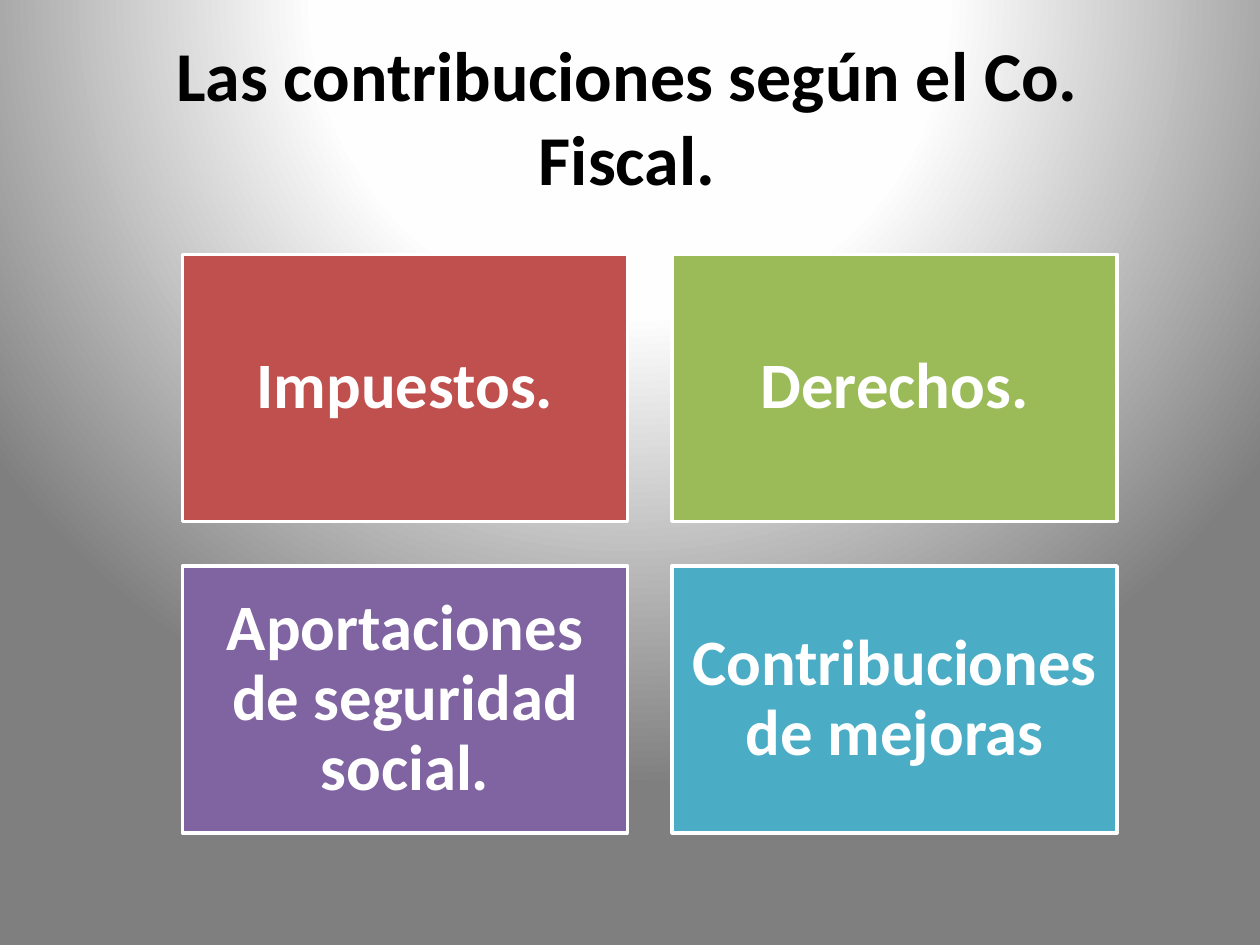
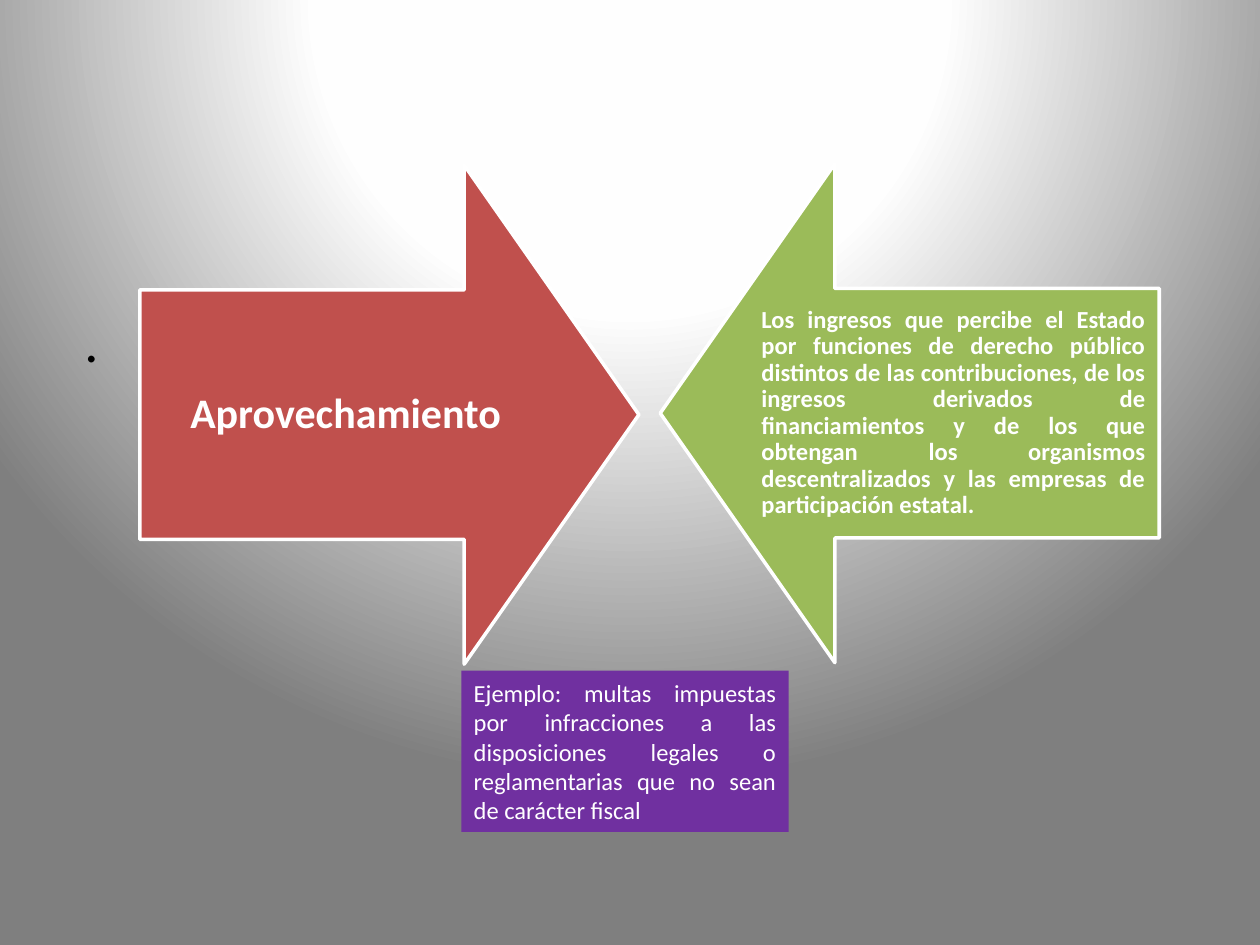
from dataclasses import dataclass

import pptx
import pptx.dml.color
import pptx.enum.shapes
import pptx.enum.text
import pptx.oxml
import pptx.oxml.ns
import pptx.util

Cm = pptx.util.Cm
Pt = pptx.util.Pt
SHAPE = pptx.enum.shapes.MSO_SHAPE
ALIGN = pptx.enum.text.PP_ALIGN
ANCHOR = pptx.enum.text.MSO_ANCHOR


@dataclass(frozen=True)
class Theme:
    # Colours
    black: str = "000000"
    white: str = "FFFFFF"
    red: str = "C0504D"
    green: str = "9BBB59"
    violet: str = "8064A2"
    aqua: str = "4BACC6"
    purple: str = "7030A0"
    glow: tuple = ((0, "FFFFFF"), (40, "FEFEFE"), (100, "7F7F7F"))
    # Type
    font: str = "Calibri"
    title: float = 40
    block: float = 37
    mark: float = 32
    concept: float = 24
    detail: float = 14


def rgb(value):
    return pptx.dml.color.RGBColor.from_string(value)


def write(frame, text, *, size, color, font, bold=False, align=ALIGN.LEFT,
          anchor=ANCHOR.MIDDLE, inset=(0.25, 0.13), spacing=None):
    """Fill a text frame; inset is (horizontal, vertical) in centimetres."""
    frame.word_wrap = True
    frame.auto_size = pptx.enum.text.MSO_AUTO_SIZE.NONE
    frame.vertical_anchor = anchor
    frame.margin_left = frame.margin_right = Cm(inset[0])
    frame.margin_top = frame.margin_bottom = Cm(inset[1])
    paragraph = frame.paragraphs[0]
    paragraph.alignment = align
    paragraph.line_spacing = spacing
    run = paragraph.add_run()
    run.text = text
    run.font.name = font
    run.font.size = Pt(size)
    run.font.bold = bold
    run.font.color.rgb = rgb(color)


class Deck:
    def __init__(self, theme):
        self.theme = theme
        self.prs = pptx.Presentation()
        self.prs.slide_width, self.prs.slide_height = Cm(25.4), Cm(19.05)
        self.slide = None
        self.set_background()

    def set_background(self):
        """Put the radial glow on the master, so every slide has it."""
        master = self.prs.slide_master
        master.background.fill.solid()
        solid = master.element.find(".//" + pptx.oxml.ns.qn("p:bgPr"))[0]
        stops = "".join(
            f'<a:gs pos="{pos * 1000}"><a:srgbClr val="{color}"/></a:gs>'
            for pos, color in self.theme.glow)
        gradient = pptx.oxml.parse_xml(
            f'<a:gradFill {pptx.oxml.ns.nsdecls("a")} rotWithShape="1">'
            f'<a:gsLst>{stops}</a:gsLst><a:path path="circle">'
            '<a:fillToRect l="50000" t="-80000" r="50000" b="180000"/>'
            '</a:path></a:gradFill>')
        solid.getparent().replace(solid, gradient)

    def add_slide(self, layout):
        layouts = self.prs.slide_layouts
        self.slide = self.prs.slides.add_slide(layouts.get_by_name(layout))

    def title(self, text, left, top, width, height):
        heading = self.slide.shapes.title
        heading.left, heading.top = Cm(left), Cm(top)
        heading.width, heading.height = Cm(width), Cm(height)
        write(heading.text_frame, text, size=self.theme.title, bold=True,
              color=self.theme.black, font=self.theme.font, align=ALIGN.CENTER)

    def label(self, text, left, top, width, height, **style):
        box = self.slide.shapes.add_textbox(
            Cm(left), Cm(top), Cm(width), Cm(height))
        write(box.text_frame, text, font=self.theme.font, **style)

    def block(self, text, left, top, width, height, *, fill,
              kind=SHAPE.RECTANGLE, outlined=True, adjust=(), **style):
        shape = self.slide.shapes.add_shape(
            kind, Cm(left), Cm(top), Cm(width), Cm(height))
        shape.shadow.inherit = False
        for index, value in enumerate(adjust):
            shape.adjustments[index] = value
        shape.fill.solid()
        shape.fill.fore_color.rgb = rgb(fill)
        if outlined:
            shape.line.color.rgb = rgb(self.theme.white)
            shape.line.width = Pt(2)
        else:
            shape.line.fill.background()
        write(shape.text_frame, text, color=self.theme.white,
              font=self.theme.font, **style)


def contributions(deck):
    theme = deck.theme
    deck.add_slide("Title Only")
    deck.title("Las contribuciones según el Co. Fiscal.", 2.2, 1.07, 20.88, 2.5)

    # Two by two grid of contribution types
    kinds = (("Impuestos.", theme.red),
             ("Derechos.", theme.green),
             ("Aportaciones de seguridad social.", theme.violet),
             ("Contribuciones de mejoras", theme.aqua))
    width, height, gap = 8.97, 5.38, 0.9
    for index, (kind, color) in enumerate(kinds):
        row, column = divmod(index, 2)
        deck.block(kind, 3.68 + column * (width + gap),
                   5.13 + row * (height + gap), width, height,
                   fill=color, size=theme.block, bold=True,
                   align=ALIGN.CENTER, inset=(0.38, 0.38), spacing=0.9)


def benefits(deck):
    theme = deck.theme
    deck.add_slide("Blank")
    deck.label(".", 1.45, 6.05, 22.86, 1.8, size=theme.mark,
               color=theme.black, anchor=ANCHOR.TOP)

    # Facing arrows: concept and definition
    side = 10.06
    arrow = dict(adjust=(0.5, 0.35), bold=True, spacing=0.9)
    deck.block("Aprovechamiento", 2.82, 3.33, side, side, fill=theme.red,
               kind=SHAPE.RIGHT_ARROW, size=theme.concept,
               align=ALIGN.CENTER, inset=(0.48, 0.48), **arrow)
    deck.block("Los ingresos que percibe el Estado por funciones de derecho "
               "público distintos de las contribuciones, de los ingresos "
               "derivados de financiamientos y de los que obtengan los "
               "organismos descentralizados y las empresas de participación "
               "estatal.", 13.31, 3.3, side, side, fill=theme.green,
               kind=SHAPE.LEFT_ARROW, size=theme.detail,
               align=ALIGN.JUSTIFY, inset=(0.28, 0.28), **arrow)

    # Example
    deck.block("Ejemplo: multas impuestas por infracciones a las "
               "disposiciones legales o reglamentarias que no sean de "
               "carácter fiscal", 9.3, 13.52, 6.6, 3.25, fill=theme.purple,
               outlined=False, size=theme.detail, align=ALIGN.JUSTIFY)


def main():
    deck = Deck(Theme())
    contributions(deck)
    benefits(deck)
    deck.prs.save("out.pptx")


if __name__ == "__main__":
    main()
